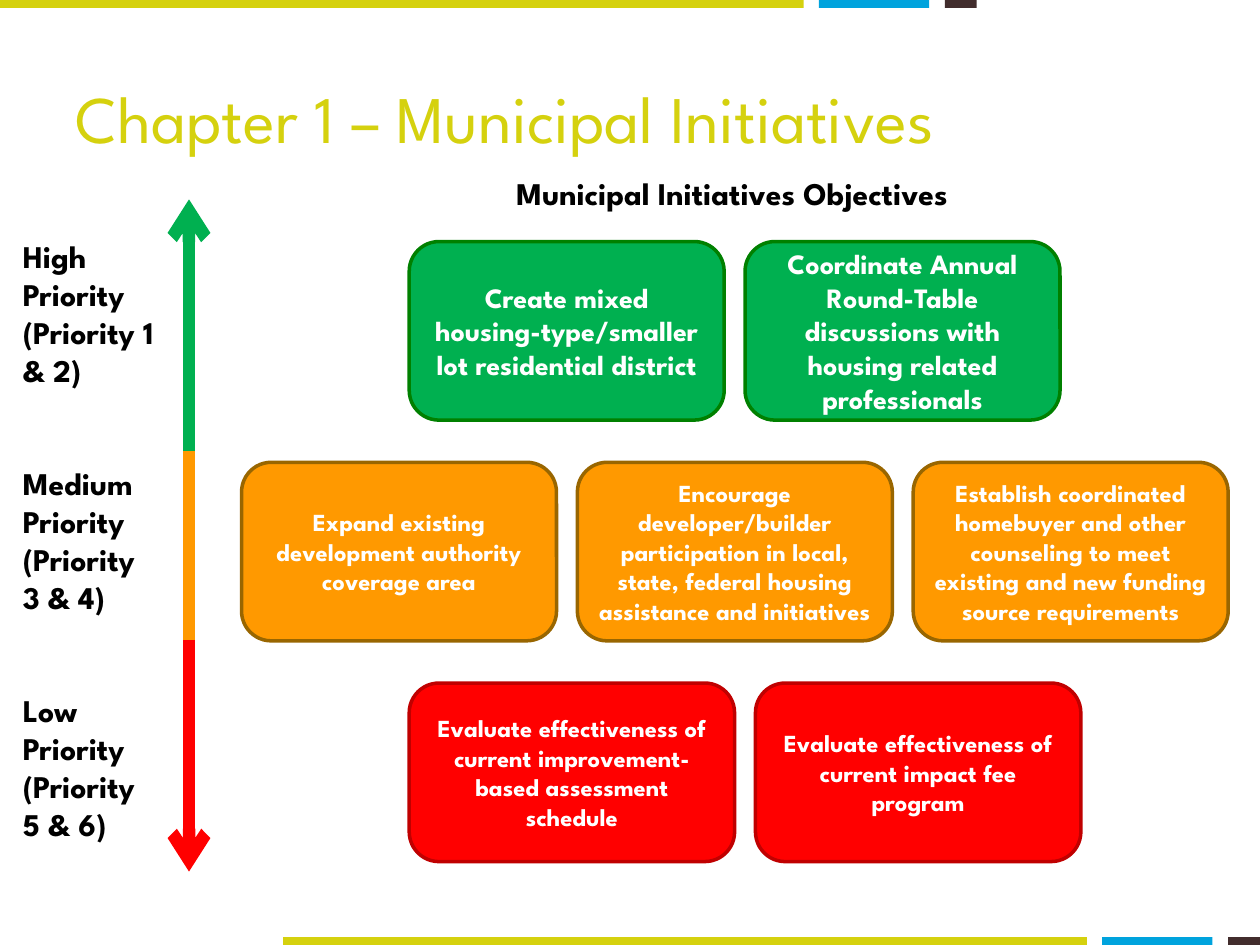
from lxml.etree import SubElement
from pptx import Presentation
from pptx.dml.color import RGBColor
from pptx.enum.shapes import MSO_CONNECTOR as CONN, MSO_SHAPE as SHAPE
from pptx.enum.text import MSO_ANCHOR as ANCHOR, PP_ALIGN as ALIGN
from pptx.oxml.ns import qn
from pptx.util import Cm, Pt

WIDTH, HEIGHT = 25.4, 19.05


def rgb(code):
    return RGBColor.from_string(code)


class Deck:
    font = "League Spartan"
    lime, blue, brown = "D5D10E", "00A3DD", "422D2D"
    green, orange, red = "00B050", "FF9900", "FF0000"
    black, white = "000000", "FFFFFF"

    def __init__(self):
        self.prs = Presentation()
        self.prs.slide_width, self.prs.slide_height = Cm(WIDTH), Cm(HEIGHT)
        self.s = self.prs.slides.add_slide(self.prs.slide_layouts[6])

    def add_runs(self, tf, paragraphs, size, color, bold=True,
                 align=ALIGN.LEFT, anchor=ANCHOR.TOP, gap=0):
        tf.word_wrap = True
        tf.vertical_anchor = anchor
        for i, text in enumerate(paragraphs):
            p = tf.add_paragraph() if i else tf.paragraphs[0]
            p.alignment = align
            p.space_before = Pt(gap if i else 0)
            r = p.add_run()
            r.text = text
            r.font.name, r.font.size, r.font.bold = self.font, Pt(size), bold
            r.font.color.rgb = rgb(color)

    def text(self, x, y, w, h, paragraphs, size, color, **style):
        sp = self.s.shapes.add_textbox(Cm(x), Cm(y), Cm(w), Cm(h))
        self.add_runs(sp.text_frame, paragraphs, size, color, **style)

    def shape(self, kind, x, y, w, h, fill, line=None):
        sp = self.s.shapes.add_shape(kind, Cm(x), Cm(y), Cm(w), Cm(h))
        sp.shadow.inherit = False
        sp.fill.solid()
        sp.fill.fore_color.rgb = rgb(fill)
        if line:
            sp.line.color.rgb = rgb(line)
            sp.line.width = Pt(2)
        else:
            sp.line.fill.background()
        return sp

    def card(self, x, y, w, h, text, size, fill, line):
        sp = self.shape(SHAPE.ROUNDED_RECTANGLE, x, y, w, h, fill, line)
        self.add_runs(sp.text_frame, [text], size, self.white,
                      align=ALIGN.CENTER, anchor=ANCHOR.MIDDLE)

    def vertical(self, x, y1, y2, color, arrow=False):
        c = self.s.shapes.add_connector(CONN.STRAIGHT, Cm(x), Cm(y1), Cm(x), Cm(y2))
        c.line.color.rgb = rgb(color)
        c.line.width = Pt(7)
        sp_pr = c._element.spPr
        if arrow:
            SubElement(sp_pr.find(qn("a:ln")), qn("a:tailEnd"), type="arrow")
        SubElement(sp_pr, qn("a:effectLst"))


def main():
    d = Deck()

    # Colour bars: bottom set runs to the right edge, top set starts at the left
    bar_h = 0.16
    bars = [(0, 16.2, d.lime), (16.51, 2.22, d.blue), (19.05, 0.64, d.brown)]
    for left, top in [(5.71, HEIGHT - bar_h), (0, 0)]:
        for x, w, color in bars:
            d.shape(SHAPE.RECTANGLE, left + x, top, w, bar_h, color)

    # Title and subtitle
    d.text(1.27, 0.76, 22.86, 3.18, ["Chapter 1 – Municipal Initiatives"], 38,
           d.lime, bold=False, anchor=ANCHOR.MIDDLE)
    d.text(10.16, 3.39, 10.16, 1.03, ["Municipal Initiatives Objectives"], 18, d.black)

    # Priority scale
    axis_x = 3.81
    d.vertical(axis_x, 9.1, 4.02, d.green, arrow=True)
    d.vertical(axis_x, 9.1, 12.9, d.orange)
    d.vertical(axis_x, 12.9, 17.57, d.red, arrow=True)
    d.text(0.21, 4.66, 3.18, 12.57,
           ["High Priority (Priority 1 & 2)",
            "Medium Priority (Priority 3 & 4)",
            "Low Priority (Priority 5 & 6)"], 18, d.black, gap=43.3)

    # Objectives, one row per priority: left, card width, size, fill, line, texts
    rows = [
        (8.25, 6.35, 16, d.green, "008000",
         ["Create mixed housing-type/smaller lot residential district",
          "Coordinate Annual Round-Table discussions with housing related professionals"]),
        (4.87, 6.35, 14, d.orange, "996600",
         ["Expand existing development authority coverage area",
          "Encourage developer/builder participation in local, state, federal "
          "housing assistance and initiatives",
          "Establish coordinated homebuyer and other counseling to meet existing "
          "and new funding source requirements"]),
        (8.25, 6.56, 14, d.red, "C00000",
         ["Evaluate effectiveness of current improvement-based assessment schedule",
          "Evaluate effectiveness of current impact fee program"]),
    ]
    top, pitch, card_h, gap = 4.87, 4.45, 3.6, 0.42
    for i, (left, w, size, fill, line, texts) in enumerate(rows):
        for j, text in enumerate(texts):
            d.card(left + j * (w + gap), top + i * pitch, w, card_h,
                   text, size, fill, line)

    d.prs.save("out.pptx")


if __name__ == "__main__":
    main()
